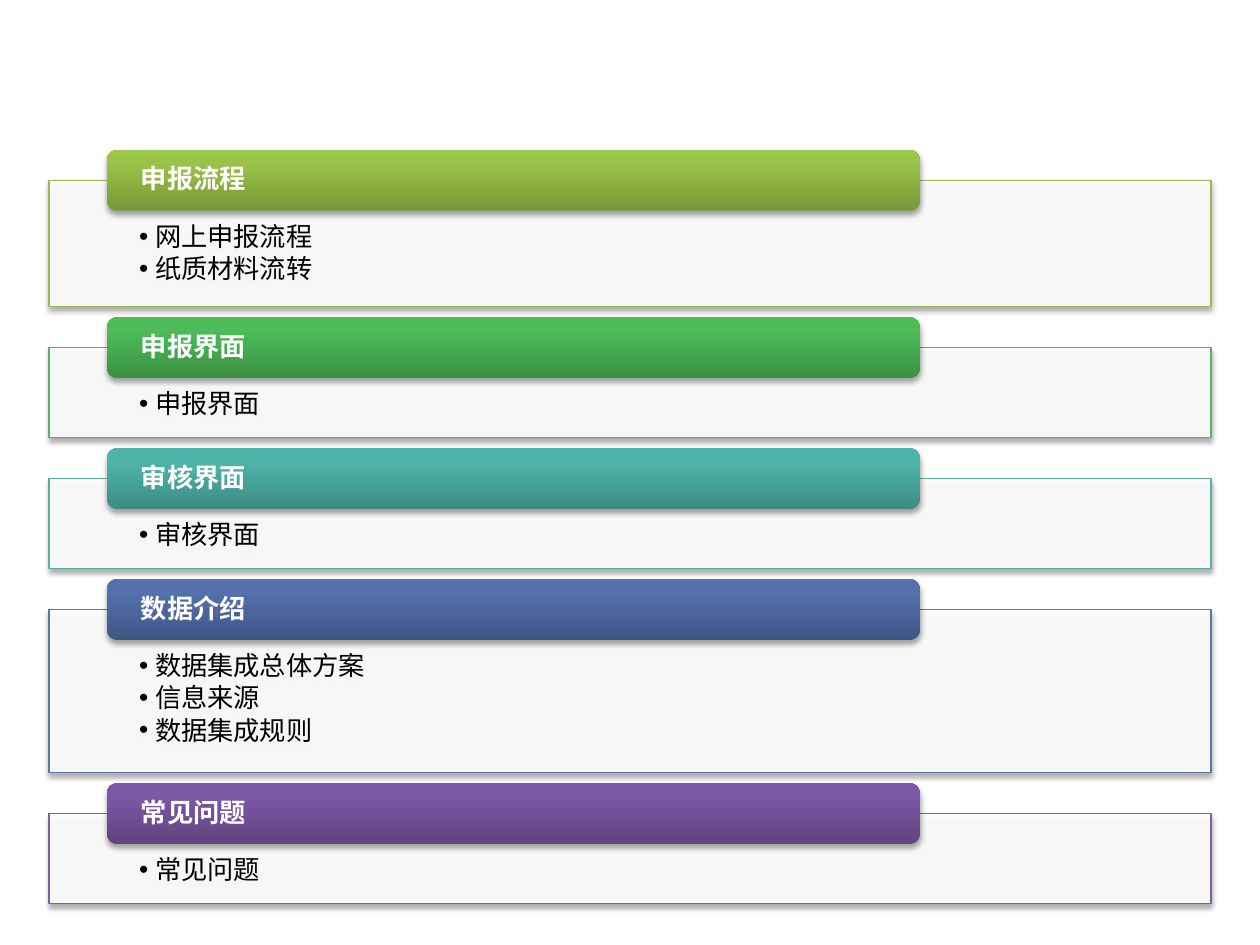
"""Build an agenda slide of five titled panels with bulleted lists."""
from dataclasses import dataclass
from typing import Any

import lxml.etree
import pptx
import pptx.dml.color
import pptx.enum.shapes
import pptx.enum.text
import pptx.oxml
import pptx.oxml.ns
import pptx.util

Pt = pptx.util.Pt
SHAPES = pptx.enum.shapes.MSO_SHAPE
ANCHOR = pptx.enum.text.MSO_ANCHOR
ALIGN = pptx.enum.text.PP_ALIGN
NAMESPACE = pptx.oxml.ns.nsdecls("a")
QN = pptx.oxml.ns.qn

PANEL_LEFT, PANEL_WIDTH, FIRST_TOP = 28, 664, 103.1
PANEL_BASE, ITEM_HEIGHT, PANEL_GAP = 30.3, 20.9, 23.6
TAB_LEFT, TAB_WIDTH, TAB_HEIGHT = 61.2, 464.4, 34.7
BULLET_INDENT = 9


@dataclass
class Section:
    heading: str
    items: list[str]
    line: str
    gradient: tuple[str, str, str]
    heading_font: str = "Calibri"
    item_font: str = "Calibri"

    @property
    def height(self) -> float:
        return PANEL_BASE + ITEM_HEIGHT * len(self.items)


SECTIONS = [
    Section("申报流程", ["网上申报流程", "纸质材料流转"], "98B955",
            ("779737", "9BC348", "9DC746"), item_font="Arial"),
    Section("申报界面", ["申报界面"], "58B361", ("3B9143", "4CBC58", "4ABF56")),
    Section("审核界面", ["审核界面"], "5AADA4", ("3D8C83", "4FB5AA", "4EB8AC")),
    Section("数据介绍", ["数据集成总体方案", "信息来源", "数据集成规则"], "5D75A6",
            ("405785", "5471AD", "5271B0")),
    Section("常见问题", ["常见问题"], "7E60A0",
            ("604480", "7C58A6", "7D57A8"), heading_font="Arial"),
]


def color(value: str) -> Any:
    """Turn a hex string into a colour."""
    return pptx.dml.color.RGBColor.from_string(value)


def set_format(target: Any, values: dict[str, Any]) -> None:
    """Set each named attribute on the target."""
    for name, value in values.items():
        setattr(target, name, value)


def add_box(slide: Any, kind: Any, bounds: tuple[float, ...]) -> Any:
    """Add a shape with the soft shadow all boxes share."""
    shape = slide.shapes.add_shape(kind, *(Pt(length) for length in bounds))
    shape.shadow.inherit = False
    effects = shape._element.spPr.find(QN("a:effectLst"))
    effects.append(pptx.oxml.parse_xml(
        f'<a:outerShdw {NAMESPACE} blurRad="{Pt(3.1)}" dist="{Pt(1.8)}" dir="5400000" '
        'rotWithShape="0"><a:srgbClr val="000000"><a:alpha val="35000"/></a:srgbClr>'
        '</a:outerShdw>'))
    return shape


def write_text(shape: Any, lines: list[str], frame: dict[str, Any],
               font: dict[str, Any], text_color: str, space_after: float,
               bulleted: bool = False) -> None:
    """Write one left-aligned paragraph for each line."""
    text_frame = shape.text_frame
    set_format(text_frame, {"word_wrap": True, **frame})
    for index, line in enumerate(lines):
        paragraph = text_frame.add_paragraph() if index else text_frame.paragraphs[0]
        paragraph.text = line
        set_format(paragraph, {"alignment": ALIGN.LEFT, "line_spacing": 0.9,
                               "space_after": Pt(space_after), "level": int(bulleted)})
        if bulleted:
            properties = paragraph._p.get_or_add_pPr()
            properties.set("marL", str(Pt(BULLET_INDENT)))
            properties.set("indent", str(-Pt(BULLET_INDENT)))
            lxml.etree.SubElement(properties, QN("a:buFont"), typeface="Arial")
            lxml.etree.SubElement(properties, QN("a:buChar"), char="•")
        for run in paragraph.runs:
            set_format(run.font, {"size": Pt(15), **font})
            run.font.color.rgb = color(text_color)


def add_panel(slide: Any, section: Section, top: float) -> None:
    """Draw the outlined panel with its list."""
    panel = add_box(slide, SHAPES.RECTANGLE,
                    (PANEL_LEFT, top, PANEL_WIDTH, section.height))
    panel.fill.solid()
    panel.fill.fore_color.rgb = color("FFFFFF")
    fill_color = panel._element.spPr.find(QN("a:solidFill"))[0]
    lxml.etree.SubElement(fill_color, QN("a:alpha"), val="90000")
    panel.line.color.rgb = color(section.line)
    panel.line.width = Pt(0.75)
    frame = {"vertical_anchor": ANCHOR.TOP, "margin_left": Pt(51.6),
             "margin_right": Pt(51.6), "margin_top": Pt(24.6), "margin_bottom": Pt(8.5)}
    write_text(panel, section.items, frame, {"name": section.item_font},
               "000000", 2.25, bulleted=True)


def add_tab(slide: Any, section: Section, panel_top: float) -> None:
    """Draw the gradient heading centred on the panel's top edge."""
    tab = add_box(slide, SHAPES.ROUNDED_RECTANGLE,
                  (TAB_LEFT, panel_top - TAB_HEIGHT / 2, TAB_WIDTH, TAB_HEIGHT))
    tab.line.fill.background()
    tab.fill.gradient()
    gradient = tab._element.spPr.find(QN("a:gradFill"))
    stops = "".join(f'<a:gs pos="{position}"><a:srgbClr val="{value}"/></a:gs>'
                    for position, value in zip((0, 80000, 100000), section.gradient))
    gradient.replace(gradient.find(QN("a:gsLst")),
                     pptx.oxml.parse_xml(f"<a:gsLst {NAMESPACE}>{stops}</a:gsLst>"))
    tab.fill.gradient_angle = 90
    frame = {"vertical_anchor": ANCHOR.MIDDLE, "margin_left": Pt(17.6),
             "margin_right": Pt(17.6), "margin_top": 0, "margin_bottom": 0}
    write_text(tab, [section.heading], frame,
               {"name": section.heading_font, "bold": True}, "FFFFFF", 5.25)


def main() -> None:
    """Create the presentation and save it."""
    presentation = pptx.Presentation()
    set_format(presentation, {"slide_width": Pt(720), "slide_height": Pt(540)})
    slide = presentation.slides.add_slide(presentation.slide_layouts[6])
    top = FIRST_TOP
    for section in SECTIONS:
        add_panel(slide, section, top)
        add_tab(slide, section, top)
        top += section.height + PANEL_GAP
    presentation.save("out.pptx")


if __name__ == "__main__":
    main()
